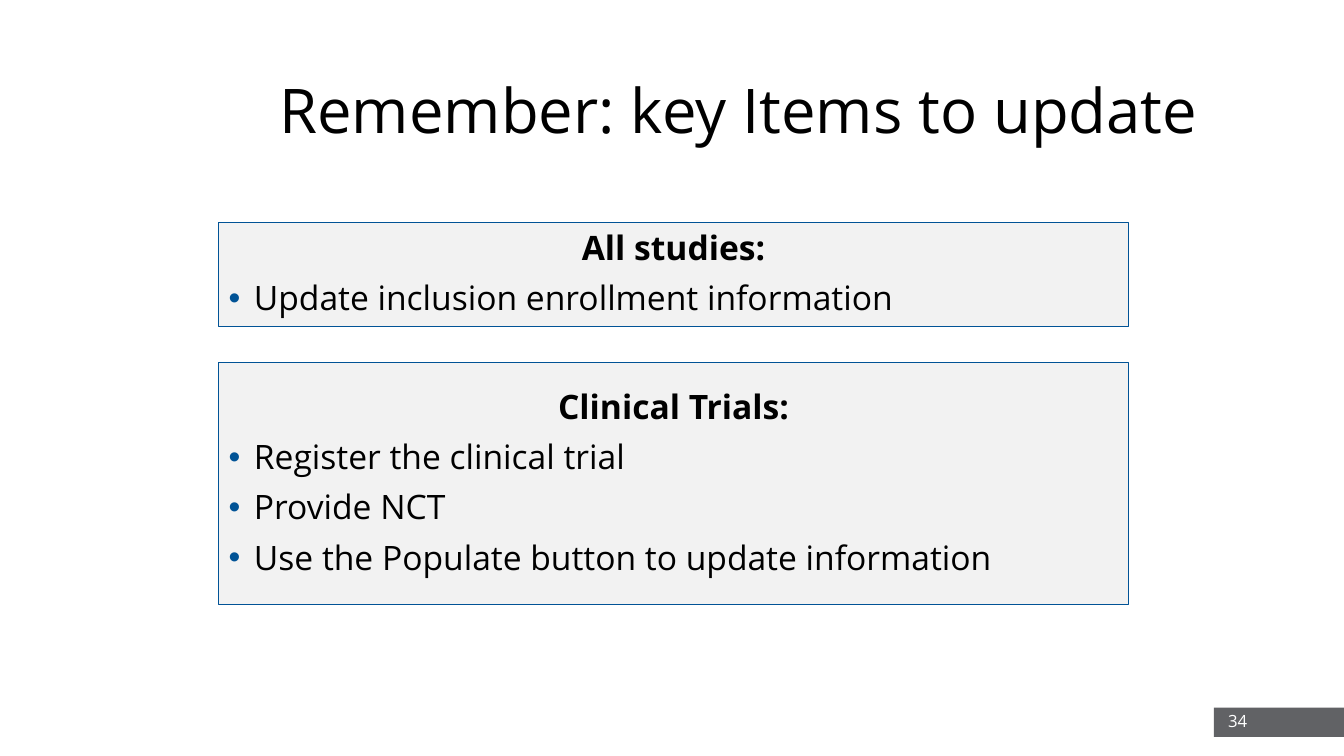
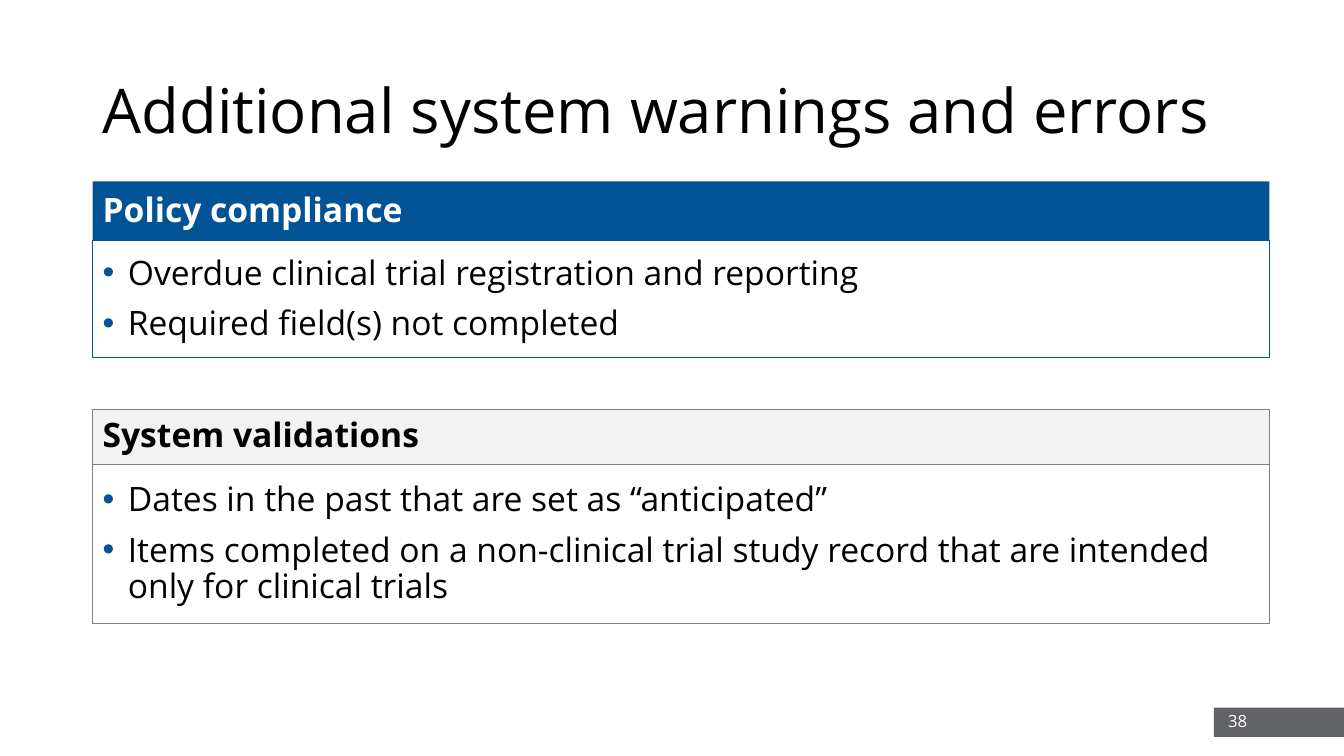
"""Build two slides on record updates and system warnings."""
import lxml.etree
import pptx
import pptx.dml.color
import pptx.enum.shapes
import pptx.enum.text
import pptx.oxml.ns
import pptx.util

Inches = pptx.util.Inches
Pt = pptx.util.Pt
ALIGN = pptx.enum.text.PP_ALIGN
COLORS = {
    "black": "000000",
    "white": "FFFFFF",
    "blue": "015396",
    "pale": "F2F2F2",
    "gray": "808080",
    "band": "616265",
}


class Slides:
    """Hold the shared style and the current slide."""

    font_name = "Open Sans"
    body_size = 24

    def __init__(self):
        self.deck = pptx.Presentation()
        self.deck.slide_width = Inches(13.33)
        self.deck.slide_height = Inches(7.5)
        self.page = None

    def color(self, name):
        return pptx.dml.color.RGBColor.from_string(COLORS[name])

    def new_page(self, title, title_left, number):
        self.page = self.deck.slides.add_slide(self.deck.slide_layouts[5])
        self.rectangle(12.04, 7.02, 1.29, 0.29, fill="band")
        heading = self.page.shapes.title
        place = {"left": title_left, "top": 0.4, "width": 12.42 - title_left, "height": 1.45}
        for name, value in place.items():
            setattr(heading, name, Inches(value))
        self.prepare_frame(heading)
        self.fill_para(heading.text_frame.paragraphs[0], title, size=44, line_spacing=0.9)
        number_box = self.page.shapes.add_textbox(*map(Inches, (9.47, 6.95, 3, 0.4)))
        self.prepare_frame(number_box)
        self.fill_para(number_box.text_frame.paragraphs[0], str(number), size=12,
                       color="white", alignment=ALIGN.RIGHT)

    def prepare_frame(self, box):
        values = {
            "word_wrap": True,
            "auto_size": pptx.enum.text.MSO_AUTO_SIZE.NONE,
            "vertical_anchor": pptx.enum.text.MSO_ANCHOR.MIDDLE,
        }
        for name, value in values.items():
            setattr(box.text_frame, name, value)

    def fill_para(self, para, text, size=body_size, color="black", bold=False,
                  alignment=ALIGN.LEFT, **spacing):
        for name, value in {"alignment": alignment, **spacing}.items():
            setattr(para, name, value)
        span = para.add_run()
        span.text = text
        values = {"name": self.font_name, "size": Pt(size), "bold": bold}
        for name, value in values.items():
            setattr(span.font, name, value)
        span.font.color.rgb = self.color(color)

    def add_bullet(self, para):
        qn = pptx.oxml.ns.qn
        properties = para._p.get_or_add_pPr()
        properties.set("marL", str(Inches(0.25)))
        properties.set("indent", str(Inches(-0.25)))
        bullet_color = lxml.etree.SubElement(properties, qn("a:buClr"))
        lxml.etree.SubElement(bullet_color, qn("a:srgbClr"), val=COLORS["blue"])
        lxml.etree.SubElement(properties, qn("a:buFont"), typeface="Arial")
        lxml.etree.SubElement(properties, qn("a:buChar"), char="•")

    def rectangle(self, left, top, width, height, fill=None, line=None):
        box = self.page.shapes.add_shape(
            pptx.enum.shapes.MSO_SHAPE.RECTANGLE, *map(Inches, (left, top, width, height)))
        box.shadow.inherit = False
        if fill:
            box.fill.solid()
            box.fill.fore_color.rgb = self.color(fill)
        else:
            box.fill.background()
        if line:
            box.line.color.rgb = self.color(line)
            box.line.width = Pt(0.75)
        else:
            box.line.fill.background()
        return box

    def panel(self, area, heading=None, bullets=(), fill=None, line=None,
              color="black", alignment=ALIGN.LEFT):
        box = self.rectangle(*area, fill=fill, line=line)
        self.prepare_frame(box)
        frame = box.text_frame
        texts = ([heading] if heading else []) + list(bullets)
        for index, text in enumerate(texts):
            para = frame.add_paragraph() if index else frame.paragraphs[0]
            is_heading = text == heading
            if not is_heading:
                self.add_bullet(para)
            self.fill_para(para, text, color=color, bold=is_heading,
                           alignment=alignment if is_heading else ALIGN.LEFT,
                           line_spacing=0.9, space_before=Pt(10 if index else 0))


def main():
    slides = Slides()

    slides.new_page("Remember: key Items to update", 2.67, 34)
    reminders = [
        (2.21, 1.03, "All studies:", ["Update inclusion enrollment information"]),
        (3.6, 2.4, "Clinical Trials:", [
            "Register the clinical trial",
            "Provide NCT",
            "Use the Populate button to update information",
        ]),
    ]
    for top, height, heading, bullets in reminders:
        slides.panel((2.17, top, 9.02, height), heading, bullets,
                     fill="pale", line="blue", alignment=ALIGN.CENTER)

    slides.new_page("Additional system warnings and errors", 0.92, 38)
    left, width = 0.92, 11.67
    warnings = [
        (1.8, 0.59, 1.16, "Policy compliance",
         {"fill": "blue", "color": "white"}, {"fill": "white", "line": "blue"}, [
             "Overdue clinical trial registration and reporting",
             "Required field(s) not completed",
         ]),
        (4.06, 0.55, 1.58, "System validations",
         {"fill": "pale", "line": "gray"}, {"line": "gray"}, [
             "Dates in the past that are set as “anticipated”",
             "Items completed on a non-clinical trial study record that are intended "
             "only for clinical trials",
         ]),
    ]
    for top, bar_height, body_height, heading, bar_style, body_style, bullets in warnings:
        slides.panel((left, top, width, bar_height), heading, **bar_style)
        slides.panel((left, top + bar_height, width, body_height),
                     bullets=bullets, **body_style)

    slides.deck.save("out.pptx")


if __name__ == "__main__":
    main()
